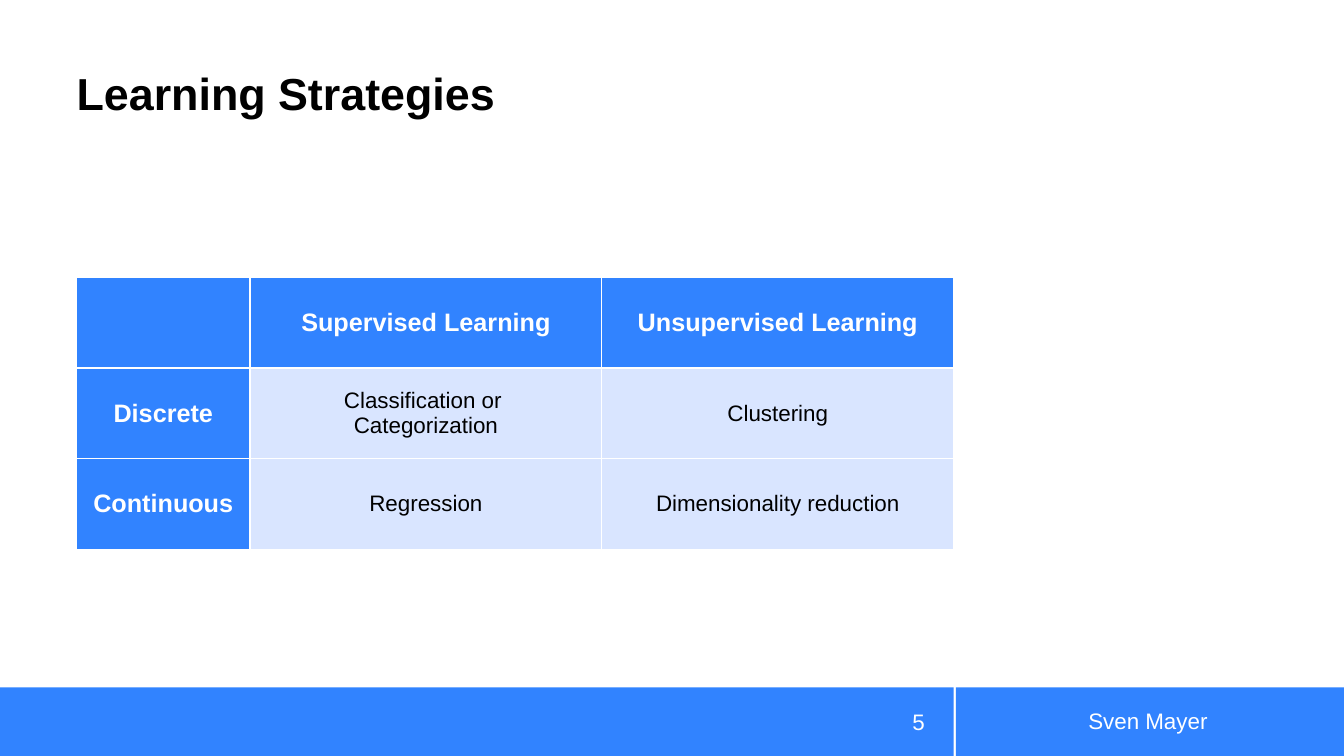
from dataclasses import dataclass

from lxml import etree
from pptx import Presentation
from pptx import util as u
from pptx.dml.color import RGBColor
from pptx.enum import shapes, text
from pptx.oxml.ns import qn

PX = 9144


@dataclass(frozen=True)
class Theme:
    font: str = "Arial"
    blue: str = "3183FF"
    pale: str = "D9E5FF"
    white: str = "FFFFFF"
    black: str = "000000"
    title_size: int = 32
    header_size: int = 18
    body_size: int = 16


THEME = Theme()

STRATEGIES = [
    ["", "Supervised Learning", "Unsupervised Learning"],
    ["Discrete", "Classification or \vCategorization", "Clustering"],
    ["Continuous", "Regression", "Dimensionality reduction"],
]
COLUMN_WIDTHS = [172, 349, 349]
ROW_HEIGHT = 90


def box(*lengths):
    return [length * PX for length in lengths]


def paint(target, color):
    target.fill.solid()
    target.fill.fore_color.rgb = RGBColor.from_string(color)


def style_text(frame, size, color, align, bold=False):
    for paragraph in frame.paragraphs:
        paragraph.alignment = align
        for run in paragraph.runs:
            run.font.name = THEME.font
            run.font.size = u.Pt(size)
            run.font.bold = bold
            run.font.color.rgb = RGBColor.from_string(color)


def add_title(slide, wording, area):
    title = slide.shapes.title
    title.left, title.top, title.width, title.height = box(*area)
    frame = title.text_frame
    frame.text = wording
    frame.auto_size = text.MSO_AUTO_SIZE.NONE
    frame.vertical_anchor = text.MSO_ANCHOR.BOTTOM
    frame.margin_left = frame.margin_right = 0
    frame.margin_top = frame.margin_bottom = 0
    frame.paragraphs[0].line_spacing = 0.9
    style_text(frame, THEME.title_size, THEME.black, text.PP_ALIGN.LEFT, True)


def add_band(slide, area):
    band = slide.shapes.add_shape(shapes.MSO_SHAPE.RECTANGLE, *box(*area))
    band.shadow.inherit = False
    paint(band, THEME.blue)
    band.line.fill.background()


def add_footer_text(slide, wording, area, align):
    frame = slide.shapes.add_textbox(*box(*area)).text_frame
    frame.word_wrap = True
    frame.vertical_anchor = text.MSO_ANCHOR.MIDDLE
    frame.text = wording
    style_text(frame, THEME.body_size, THEME.white, align)


def add_borders(cell):
    properties = cell._tc.get_or_add_tcPr()
    for position, side in enumerate(("a:lnL", "a:lnR", "a:lnT", "a:lnB")):
        border = etree.Element(qn(side), w=str(u.Pt(1)))
        fill = etree.SubElement(border, qn("a:solidFill"))
        etree.SubElement(fill, qn("a:srgbClr"), val=THEME.white)
        properties.insert(position, border)


def fill_cell(cell, wording, is_header):
    cell.text_frame.text = wording
    cell.vertical_anchor = text.MSO_ANCHOR.MIDDLE
    paint(cell, THEME.blue if is_header else THEME.pale)
    style_text(
        cell.text_frame,
        THEME.header_size if is_header else THEME.body_size,
        THEME.white if is_header else THEME.black,
        text.PP_ALIGN.CENTER,
        is_header,
    )
    add_borders(cell)


def add_strategy_table(slide, left, top):
    area = box(left, top, sum(COLUMN_WIDTHS), ROW_HEIGHT * len(STRATEGIES))
    grid = slide.shapes.add_table(
        len(STRATEGIES), len(COLUMN_WIDTHS), *area
    ).table
    grid.first_col = True
    for column, width in zip(grid.columns, COLUMN_WIDTHS):
        column.width = width * PX
    for r, entries in enumerate(STRATEGIES):
        grid.rows[r].height = ROW_HEIGHT * PX
        for c, wording in enumerate(entries):
            fill_cell(grid.cell(r, c), wording, r == 0 or c == 0)


def main():
    deck = Presentation()
    deck.slide_width, deck.slide_height = box(1333, 750)
    slide = deck.slides.add_slide(deck.slide_layouts[5])
    add_band(slide, (0, 682, 946, 68))
    add_band(slide, (948, 682, 385, 68))
    add_title(slide, "Learning Strategies", (76, 13, 870, 106))
    add_footer_text(slide, "Sven Mayer", (961, 695, 355, 40), text.PP_ALIGN.CENTER)
    add_footer_text(slide, "5", (841, 696, 86, 40), text.PP_ALIGN.RIGHT)
    add_strategy_table(slide, 76, 275)
    deck.save("out.pptx")


if __name__ == "__main__":
    main()
